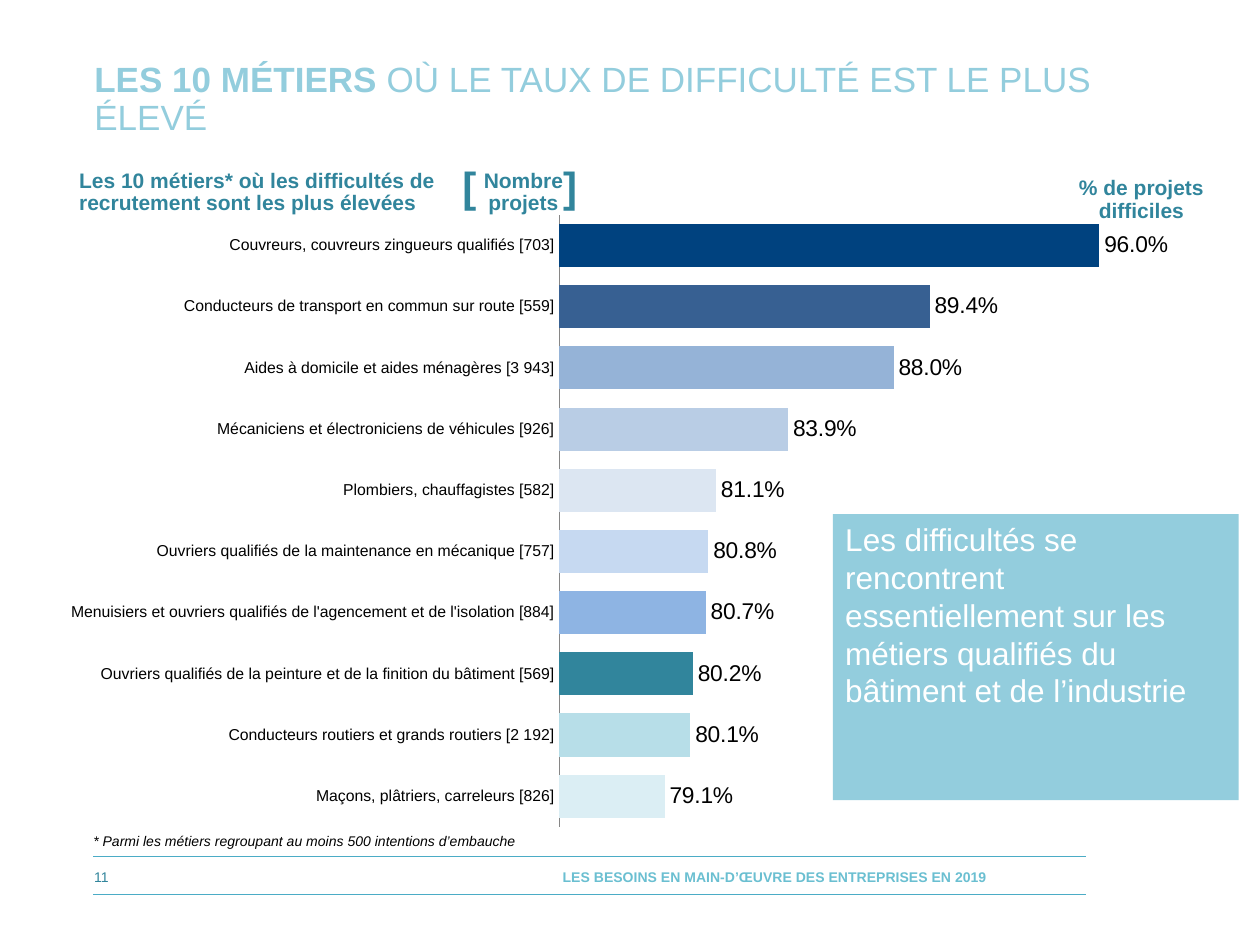
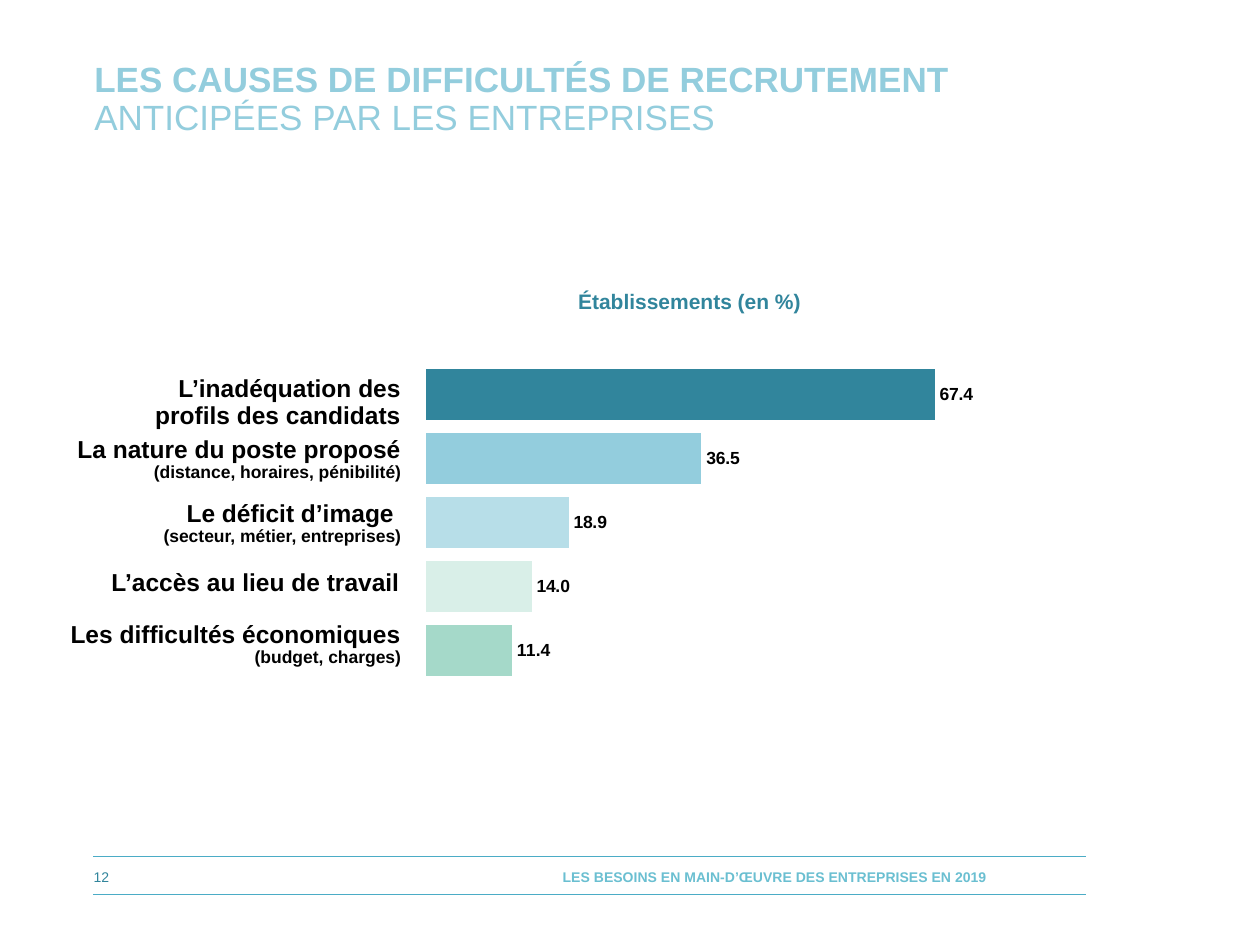
"""Build two slides on recruitment difficulties, each with a bar chart."""
import pptx
import pptx.chart.data
import pptx.dml.color
import pptx.enum.chart
import pptx.enum.shapes
import pptx.enum.text
import pptx.oxml
import pptx.util
from pptx.util import Inches

COLOURS = {
    "sky": "93CDDD", "teal": "31859C", "footer": "6ABFD1", "rule": "4BACC6",
    "black": "000000", "white": "FFFFFF", "axis": "868686",
}
JOBS = [
    ("Couvreurs, couvreurs zingueurs qualifiés [703]", 0.96, "00427F"),
    ("Conducteurs de transport en commun sur route [559]", 0.894, "376092"),
    ("Aides à domicile et aides ménagères [3 943]", 0.88, "95B3D7"),
    ("Mécaniciens et électroniciens de véhicules [926]", 0.839, "B9CDE5"),
    ("Plombiers, chauffagistes [582]", 0.811, "DCE6F2"),
    ("Ouvriers qualifiés de la maintenance en mécanique [757]", 0.808, "C6D9F1"),
    ("Menuisiers et ouvriers qualifiés de l'agencement et de l'isolation [884]", 0.807, "8EB4E3"),
    ("Ouvriers qualifiés de la peinture et de la finition du bâtiment [569]", 0.802, "31859C"),
    ("Conducteurs routiers et grands routiers [2 192]", 0.801, "B7DEE8"),
    ("Maçons, plâtriers, carreleurs [826]", 0.791, "DBEEF4"),
]
CAUSES = [(11.4, "A5D9C9"), (14, "D9EFE8"), (18.9, "B7DEE8"), (36.5, "93CDDD"), (67.4, "31859C")]
CAUSE_LABELS = [
    ((0.76, 2.94, 2.52, 0.53), "L’inadéquation des profils des candidats", ""),
    ((0.46, 3.42, 2.82, 0.46), "La nature du poste proposé ", "(distance, horaires, pénibilité)"),
    ((0.54, 3.93, 2.74, 0.46), "Le déficit d’image \n", "(secteur, métier, entreprises)"),
    ((0.71, 4.48, 2.56, 0.31), "L’accès au lieu de travail", ""),
    ((0.44, 4.89, 2.84, 0.46), "Les difficultés économiques ", "(budget, charges)"),
]
ALIGN = pptx.enum.text.PP_ALIGN
ANCHOR = pptx.enum.text.MSO_ANCHOR
DEFAULT_INSETS = (0.1, 0.05, 0.1, 0.05)
HEADING_INSETS = (0.1, 0.05, 0, 0.05)


def rgb(colour):
    """Return the colour object for a name or a hex string."""
    return pptx.dml.color.RGBColor.from_string(COLOURS.get(colour, colour))


class Painter:
    """Hold the style and the current slide, and draw each kind of element."""

    font = "Arial"

    def __init__(self, deck):
        """Keep the deck whose slides are drawn."""
        self.deck = deck
        self.slide = None

    def start_slide(self, number, bold_title, light_title):
        """Add a slide with its rules, title, footer and page number."""
        self.slide = self.deck.slides.add_slide(self.deck.slide_layouts[6])
        for height in (6.8, 7.1):
            self.rule(0.74, 8.62, height)
        self.text((0.65, 0.44, 8.89, 0.71),
                  [(bold_title, 20, True), (light_title, 20, False)],
                  "sky", anchor=ANCHOR.MIDDLE)
        self.text((3.59, 6.81, 5.12, 0.3),
                  [("LES BESOINS EN MAIN-D’ŒUVRE DES ENTREPRISES EN 2019", 8, True)],
                  "footer", ALIGN.CENTER, ANCHOR.MIDDLE, (0.1, 0, 0.1, 0), grow=False)
        self.text((0.53, 6.76, 0.55, 0.4), [(str(number), 8, False)],
                  "teal", ALIGN.CENTER, ANCHOR.MIDDLE, grow=False)

    def rule(self, left, right, height):
        """Draw a thin horizontal line."""
        line = self.slide.shapes.add_connector(
            pptx.enum.shapes.MSO_CONNECTOR.STRAIGHT,
            Inches(left), Inches(height), Inches(right), Inches(height))
        line.line.color.rgb = rgb("rule")
        line.line.width = pptx.util.Pt(0.5)
        properties = line._element.spPr
        properties.append(properties.makeelement(pptx.oxml.ns.qn("a:effectLst"), {}))

    def fill_text(self, shape, runs, colour, align, anchor, insets, spacing, italic=False):
        """Set a frame and write its runs, each a text, a size and a weight."""
        frame = shape.text_frame
        frame.word_wrap = True
        frame.vertical_anchor = anchor
        frame.margin_left, frame.margin_top, frame.margin_right, frame.margin_bottom = map(Inches, insets)
        para = frame.paragraphs[0]
        para.alignment = align
        para.line_spacing = spacing
        for words, size, bold in runs:
            span = para.add_run()
            span.text = words.rstrip("\n")
            span.font.name = self.font
            span.font.size = pptx.util.Pt(size)
            span.font.bold = bold
            span.font.italic = italic
            span.font.color.rgb = rgb(colour)
            if words.endswith("\n"):
                para.add_line_break()

    def text(self, place, runs, colour, align=ALIGN.LEFT, anchor=ANCHOR.TOP,
             insets=DEFAULT_INSETS, grow=True, italic=False):
        """Add a text box."""
        box = self.slide.shapes.add_textbox(*map(Inches, place))
        self.fill_text(box, runs, colour, align, anchor, insets, 0.9 if grow else 1.0, italic)
        if grow:
            box.text_frame.auto_size = pptx.enum.text.MSO_AUTO_SIZE.SHAPE_TO_FIT_TEXT

    def heading(self, place, words, align=ALIGN.LEFT, size=12):
        """Add a bold teal heading."""
        self.text(place, [(words, size, True)], "teal", align, insets=HEADING_INSETS)

    def callout(self, place, words):
        """Add a filled rectangle with white text."""
        box = self.slide.shapes.add_shape(
            pptx.enum.shapes.MSO_SHAPE.RECTANGLE, *map(Inches, place))
        box.shadow.inherit = False
        box.fill.solid()
        box.fill.fore_color.rgb = rgb("sky")
        box.line.fill.background()
        self.fill_text(box, [(words, 18, False)], "white", ALIGN.LEFT, ANCHOR.TOP,
                       DEFAULT_INSETS, 1.0)

    def bar_chart(self, place, categories, series, plot_area, limits, number_format, gap, overlap):
        """Add a horizontal bar chart without a value axis and return it."""
        data = pptx.chart.data.CategoryChartData()
        data.categories = categories
        for index, values in enumerate(series, 1):
            data.add_series(f"Series {index}", values)
        chart = self.slide.shapes.add_chart(
            pptx.enum.chart.XL_CHART_TYPE.BAR_CLUSTERED, *map(Inches, place), data).chart
        chart.has_legend = False
        chart.has_title = False
        chart.font.name = self.font
        chart.font.size = pptx.util.Pt(10)
        chart.font.color.rgb = rgb("black")
        plot = chart.plots[0]
        plot.vary_by_categories = False
        plot.gap_width = gap
        plot.overlap = overlap
        chart.value_axis.minimum_scale, chart.value_axis.maximum_scale = limits
        chart.value_axis.has_major_gridlines = False
        chart.value_axis.visible = False
        for bars in plot.series:
            bars.invert_if_negative = False
            labels = bars.data_labels
            labels.show_value = True
            labels.number_format = number_format
            labels.number_format_is_linked = False
            labels.position = pptx.enum.chart.XL_LABEL_POSITION.OUTSIDE_END
        self.place_plot(chart, plot_area)
        return chart

    def place_plot(self, chart, plot_area):
        """Fix the inner plot area and leave the chart background clear."""
        space = pptx.oxml.ns.nsdecls("c", "a")
        sizes = "".join(f'<c:{key} val="{value}"/>' for key, value in zip("xywh", plot_area))
        layout = pptx.oxml.parse_xml(
            f'<c:layout {space}><c:manualLayout><c:layoutTarget val="inner"/>'
            f'<c:xMode val="edge"/><c:yMode val="edge"/>{sizes}</c:manualLayout></c:layout>')
        area = chart.element.find(".//" + pptx.oxml.ns.qn("c:plotArea"))
        for former in area.findall(pptx.oxml.ns.qn("c:layout")):
            area.remove(former)
        area.insert(0, layout)
        clear = pptx.oxml.parse_xml(
            f"<c:spPr {space}><a:noFill/><a:ln><a:noFill/></a:ln></c:spPr>")
        chart.element.find(pptx.oxml.ns.qn("c:chart")).addnext(clear)


def paint(fill, colour):
    """Make a fill solid in one colour."""
    fill.solid()
    fill.fore_color.rgb = rgb(colour)


def add_jobs_slide(painter):
    """Draw the ten jobs with the highest rate of difficulty."""
    painter.start_slide(11, "LES 10 MÉTIERS ", "OÙ LE TAUX DE DIFFICULTÉ EST LE PLUS ÉLEVÉ")
    painter.heading((8.16, 1.36, 1.7, 0.46), "% de projets difficiles", ALIGN.CENTER)
    painter.heading((3.58, 1.3, 1.05, 0.46), "Nombre projets", ALIGN.CENTER)
    painter.heading((0.53, 1.3, 3.05, 0.46),
                    "Les 10 métiers* où les difficultés de recrutement sont les plus élevées")
    painter.text((0.74, 6.57, 7.08, 0.22),
                 [("* Parmi les métiers regroupant au moins 500 intentions d’embauche", 8, False)],
                 "black", anchor=ANCHOR.BOTTOM, insets=(0, 0.05, 0, 0.05), italic=True)
    names, rates, colours = zip(*JOBS)
    chart = painter.bar_chart((0.38, 1.61, 9.35, 5.07), names, [rates],
                              (0.434, 0.019, 0.546, 0.958), (0.75, 1), "0.0%", 42, 0)
    axis = chart.category_axis
    axis.reverse_order = True
    axis.major_tick_mark = pptx.enum.chart.XL_TICK_MARK.NONE
    axis.tick_labels.font.size = pptx.util.Pt(9)
    axis.format.line.color.rgb = rgb("axis")
    axis.format.line.width = pptx.util.Pt(0.75)
    bars = chart.plots[0].series[0]
    paint(bars.format.fill, "4F81BD")
    bars.data_labels.font.size = pptx.util.Pt(13)
    for index, colour in enumerate(colours):
        paint(bars.points[index].format.fill, colour)
    for left, bracket in ((3.15, "["), (3.95, "]")):
        painter.heading((left, 1.27, 1.05, 0.46), bracket, ALIGN.CENTER, 24)
    painter.callout((6.61, 4.08, 3.22, 2.27),
                    "Les difficultés se rencontrent essentiellement sur les métiers "
                    "qualifiés du bâtiment et de l’industrie")


def add_causes_slide(painter):
    """Draw the causes of difficulty named by the employers."""
    painter.start_slide(12, "LES CAUSES DE DIFFICULTÉS DE RECRUTEMENT \n",
                        "ANTICIPÉES PAR LES ENTREPRISES")
    painter.heading((4.49, 2.26, 2.1, 0.28), "Établissements (en %)")
    for place, cause, detail in CAUSE_LABELS:
        runs = [(cause, 14, True)] + ([(detail, 10, True)] if detail else [])
        painter.text(place, runs, "black", ALIGN.RIGHT)
    chart = painter.bar_chart((3.28, 2.56, 5, 3.18), ["1"], [[share] for share, _ in CAUSES],
                              (0.02, 0.021, 0.959, 0.958), (0, 80), "0.0__", 150, -25)
    chart.category_axis.visible = False
    for bars, (_, colour) in zip(chart.plots[0].series, CAUSES):
        paint(bars.format.fill, colour)
        bars.data_labels.font.size = pptx.util.Pt(10)
        bars.data_labels.font.bold = True


def main():
    """Build the deck and save it."""
    deck = pptx.Presentation()
    deck.slide_width, deck.slide_height = Inches(10), Inches(7.5)
    painter = Painter(deck)
    add_jobs_slide(painter)
    add_causes_slide(painter)
    deck.save("out.pptx")


if __name__ == "__main__":
    main()
